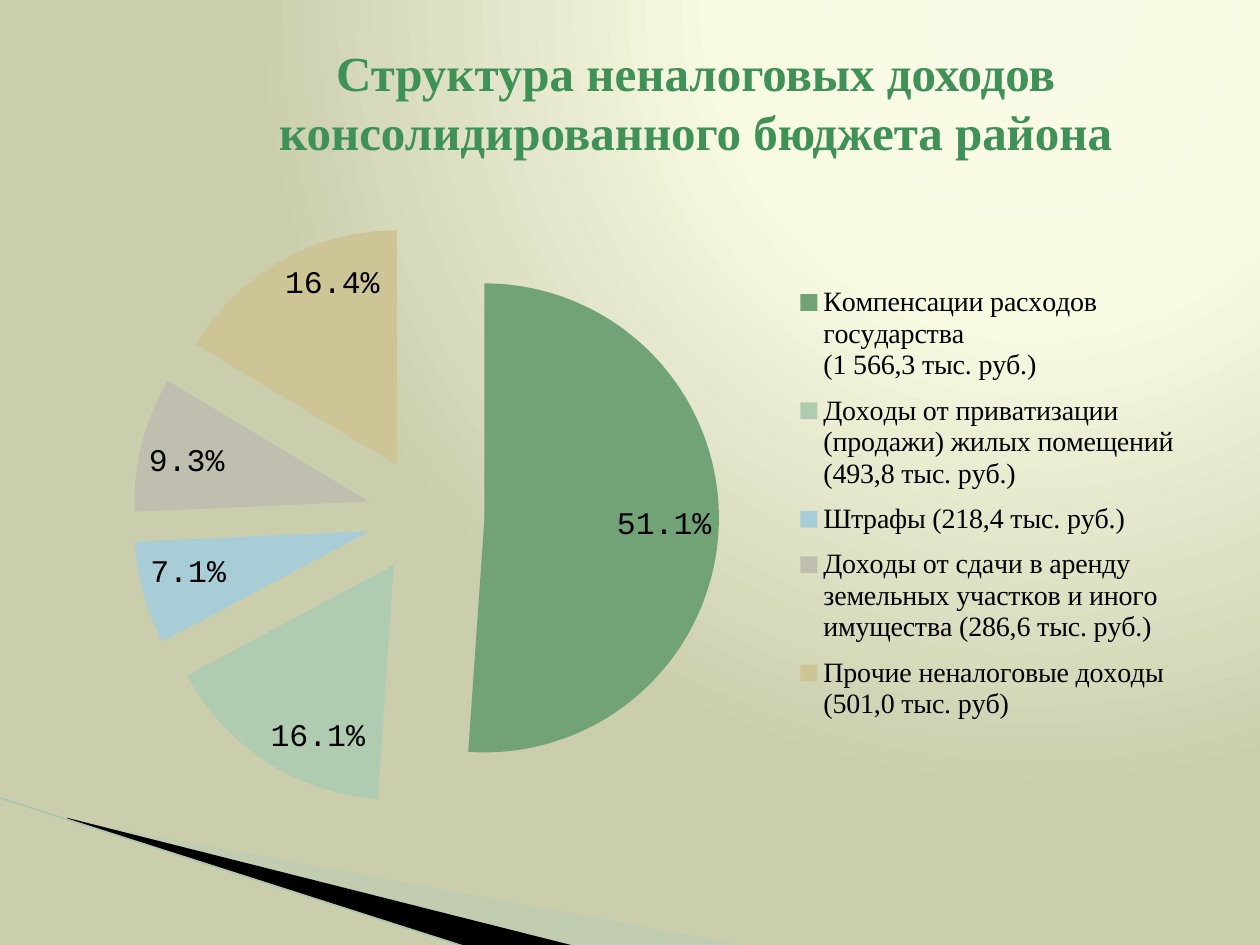
from lxml import etree
from pptx import Presentation
from pptx import util as u
from pptx.chart import data as cd
from pptx.dml import color as col
from pptx.enum import chart as ch, shapes, text
from pptx.oxml import ns

RGB = col.RGBColor
BLACK = RGB(0x00, 0x00, 0x00)
GREEN = RGB(0x3F, 0x91, 0x58)
PALE = RGB(0xB3, 0xCB, 0xB5)
EDGE = RGB(0xAC, 0xC6, 0xAE)
SLICES = [
    RGB(0x72, 0xA3, 0x76),
    RGB(0xB0, 0xCC, 0xB0),
    RGB(0xA8, 0xCD, 0xD7),
    RGB(0xC0, 0xBE, 0xAF),
    RGB(0xCE, 0xC5, 0x97),
]
GLOW = [
    (0, RGB(0xF9, 0xFB, 0xE7)),
    (40, RGB(0xF8, 0xFA, 0xE2)),
    (100, RGB(0xCB, 0xCE, 0xAD)),
]
SERIF = "Times New Roman"
MONO = "Courier New"
INCOME = [
    ("Компенсации расходов государства\n(1 566,3 тыс. руб.)", 0.511),
    ("Доходы от приватизации (продажи) жилых помещений (493,8 тыс. руб.)", 0.161),
    ("Штрафы (218,4 тыс. руб.)", 0.071),
    ("Доходы от сдачи в аренду земельных участков и иного имущества (286,6 тыс. руб.)", 0.093),
    ("Прочие неналоговые доходы (501,0 тыс. руб)", 0.164),
]


def node(up, tag, **attrs):
    return etree.SubElement(up, ns.qn(tag), {k: str(v) for k, v in attrs.items()})


class Deck:
    def __init__(self):
        self.prs = Presentation()
        self.prs.slide_width = u.Inches(10)
        self.prs.slide_height = u.Inches(7.5)
        self.slide = self.prs.slides.add_slide(self.prs.slide_layouts[5])

    def glow(self, stops, left, low):
        self.slide.background.fill.gradient()
        grad = self.slide.element.find(".//" + ns.qn("a:gradFill"))
        for kid in list(grad):
            grad.remove(kid)
        marks = node(grad, "a:gsLst")
        for at, tone in stops:
            node(node(marks, "a:gs", pos=at * 1000), "a:srgbClr", val=tone)
        shade = node(grad, "a:path", path="circle")
        node(shade, "a:fillToRect", l=left * 1000, t=0, r=0, b=low * 1000)

    def blade(self, points, tone, alpha=None):
        spots = [(u.Inches(x), u.Inches(y)) for x, y in points]
        form = self.slide.shapes.build_freeform(*spots[0])
        form.add_line_segments(spots[1:], close=True)
        shape = form.convert_to_shape()
        shape.shadow.inherit = False
        shape.fill.solid()
        shape.fill.fore_color.rgb = tone
        shape.line.fill.background()
        if alpha:
            tint = shape.element.spPr.find(".//" + ns.qn("a:srgbClr"))
            node(tint, "a:alpha", val=alpha * 1000)

    def line(self, start, end, tone, width):
        ends = [u.Inches(v) for v in start + end]
        rule = self.slide.shapes.add_connector(shapes.MSO_CONNECTOR.STRAIGHT, *ends)
        rule.line.color.rgb = tone
        rule.line.width = u.Pt(width)
        node(rule.element.spPr, "a:effectLst")

    def title(self, box, words, size):
        head = self.slide.shapes.title
        head.left, head.top, head.width, head.height = [u.Inches(v) for v in box]
        frame = head.text_frame
        frame.word_wrap = True
        frame.auto_size = text.MSO_AUTO_SIZE.NONE
        frame.vertical_anchor = text.MSO_ANCHOR.MIDDLE
        para = frame.paragraphs[0]
        para.alignment = text.PP_ALIGN.CENTER
        run = para.add_run()
        run.text = words
        self.font(run.font, SERIF, size, GREEN, True)

    def font(self, font, name, size, tone, bold=False):
        font.name = name
        font.size = u.Pt(size)
        font.bold = bold
        font.color.rgb = tone

    def place(self, part, box, inner=False):
        old = part.find(ns.qn("c:layout"))
        if old is not None:
            part.remove(old)
        lay = etree.Element(ns.qn("c:layout"))
        spot = node(lay, "c:manualLayout")
        if inner:
            node(spot, "c:layoutTarget", val="inner")
        for key in "xy":
            node(spot, f"c:{key}Mode", val="edge")
        for key, val in zip("xywh", box):
            node(spot, f"c:{key}", val=val)
        if inner:
            part.insert(0, lay)
        else:
            part.find(ns.qn("c:legendPos")).addnext(lay)

    def pie(self, box, rows, tones, burst):
        data = cd.CategoryChartData(number_format="0.0%")
        data.categories = [name for name, _ in rows]
        data.add_series("Series 1", [val for _, val in rows])
        area = [u.Inches(v) for v in box]
        chart = self.slide.shapes.add_chart(ch.XL_CHART_TYPE.PIE, *area, data).chart
        chart.has_title = False
        self.font(chart.font, MONO, 18, BLACK)
        plot = chart.plots[0]
        plot.vary_by_categories = True
        series = plot.series[0]
        blast = etree.Element(ns.qn("c:explosion"), val=str(burst))
        series._element.find(ns.qn("c:tx")).addnext(blast)
        for i, tone in enumerate(tones):
            part = series.points[i].format
            part.fill.solid()
            part.fill.fore_color.rgb = tone
            part.line.fill.background()
        tags = series.data_labels
        tags.show_value = True
        tags.show_percentage = False
        tags.number_format = "0.0%"
        tags.number_format_is_linked = False
        tags.position = ch.XL_LABEL_POSITION.INSIDE_END
        self.font(tags.font, MONO, 18, BLACK)
        chart.has_legend = True
        key = chart.legend
        key.position = ch.XL_LEGEND_POSITION.RIGHT
        key.include_in_layout = False
        self.font(key.font, SERIF, 16, BLACK)
        self.place(chart.element.find(".//" + ns.qn("c:plotArea")), (0.06, 0.03, 0.52, 0.94), True)
        self.place(chart.element.find(".//" + ns.qn("c:legend")), (0.64, 0.11, 0.35, 0.74))


def main():
    deck = Deck()
    deck.glow(GLOW, 65, 98)
    deck.blade([(0.55, 6.51), (5.95, 7.51), (4.56, 7.51), (0.55, 6.5)], PALE, 40)
    deck.blade([(0.53, 6.49), (4.57, 7.51), (3.72, 7.52), (0.54, 6.5)], BLACK)
    deck.line((-0.01, 6.33), (3.71, 7.52), EDGE, 0.95)
    deck.pie((0.5, 1.62, 9, 4.95), INCOME, SLICES, 25)
    deck.title(
        (1.54, 0.3, 7.96, 1.01),
        "Структура неналоговых доходов консолидированного бюджета района",
        28,
    )
    deck.prs.save("out.pptx")


if __name__ == "__main__":
    main()
